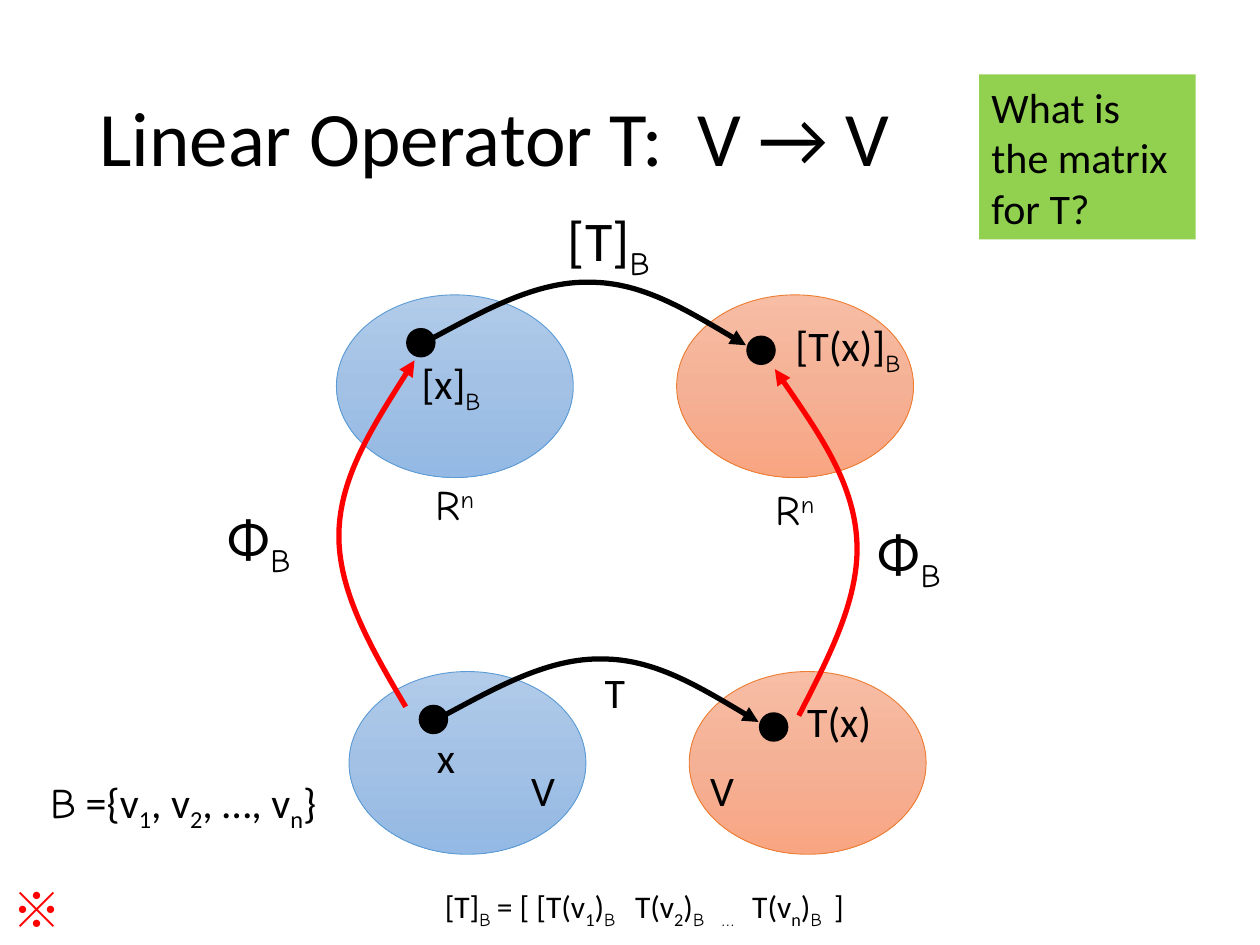
from copy import deepcopy

from lxml import etree
from pptx import Presentation
from pptx import util as u
from pptx.dml.color import RGBColor
from pptx.enum import shapes, text
from pptx.oxml.ns import qn

COLORS = {"ink": "000000", "red": "FF0000", "green": "92D050",
          "blue_edge": "5B9BD5", "orange_edge": "ED7D31"}
GRADIENTS = {"blue": ("B1CBE9", "A3C1E5", "93B9E4"),
             "orange": ("F7BDA5", "F5B196", "F8A582")}
SANS, COMIC, CJK = "Calibri", "Comic Neue", "Noto Sans CJK TC"
SUB, SUPER = -25, 30
BASIS = ("B", COMIC, SUB)
CENTER = text.PP_ALIGN.CENTER
LABEL_SIZE = (1.2, 0.5)
OVAL_SIZE = (1.88, 1.45)
DOT = 0.22
OVAL_GAP = 2.7


def rgb(name):
    return RGBColor.from_string(COLORS.get(name, name))


def write(frame, runs, size, color="ink", align=None, tabs=(), spacing=None):
    """Fill a frame with runs given as strings or (text, font, baseline)."""
    paragraph = frame.paragraphs[0]
    for name, value in {"alignment": align, "line_spacing": spacing}.items():
        setattr(paragraph, name, value)
    if tabs:
        stops = etree.SubElement(paragraph._p.get_or_add_pPr(), qn("a:tabLst"))
        for stop in tabs:
            etree.SubElement(stops, qn("a:tab"), pos=str(u.Inches(stop)), algn="l")
    for part in runs:
        words, font, baseline = (part, SANS, 0) if isinstance(part, str) else part
        run = paragraph.add_run()
        run.text = words
        for name, value in {"name": font, "size": u.Pt(size)}.items():
            setattr(run.font, name, value)
        run.font.color.rgb = rgb(color)
        properties = run._r.get_or_add_rPr()
        etree.SubElement(properties, qn("a:ea"), typeface=font)
        if baseline:
            properties.set("baseline", str(baseline * 1000))


def add_text(slide, box, runs, size=24, wrap=True, frame_format=None, **style):
    frame = slide.shapes.add_textbox(*map(u.Inches, box)).text_frame
    frame.word_wrap = wrap
    for name, value in (frame_format or {}).items():
        setattr(frame, name, value)
    write(frame, runs, size, **style)


def add_shape(slide, kind, box):
    shape = slide.shapes.add_shape(kind, *map(u.Inches, box))
    shape.shadow.inherit = False
    return shape


def add_oval(slide, left, top, hue):
    oval = add_shape(slide, shapes.MSO_SHAPE.OVAL, (left, top, *OVAL_SIZE))
    oval.fill.gradient()
    oval.fill.gradient_angle = 270
    stop_list = oval._element.spPr.find(".//" + qn("a:gsLst"))
    stop_list.insert(1, deepcopy(stop_list[0]))
    for stop, color, position in zip(oval.fill.gradient_stops, GRADIENTS[hue], (0, 0.5, 1)):
        stop.color.rgb = rgb(color)
        stop.position = position
    oval.line.color.rgb = rgb(hue + "_edge")
    oval.line.width = u.Pt(0.5)


def add_dot(slide, left, top):
    dot = add_shape(slide, shapes.MSO_SHAPE.OVAL, (left, top, DOT, DOT))
    dot.fill.solid()
    dot.fill.fore_color.rgb = rgb("ink")
    dot.line.color.rgb = rgb("ink")
    dot.line.width = u.Pt(1)


def add_curved_arrow(slide, left, top, points, color):
    """Draw cubic Bézier pieces; points are the start, then threes."""
    start, *rest = [(u.Inches(left + x), u.Inches(top + y)) for x, y in points]
    builder = slide.shapes.build_freeform(*start)
    builder.add_line_segments(rest, close=False)
    arrow = builder.convert_to_shape()
    arrow.shadow.inherit = False
    arrow.fill.background()
    arrow.line.color.rgb = rgb(color)
    arrow.line.width = u.Pt(3)
    etree.SubElement(arrow.line._get_or_add_ln(), qn("a:tailEnd"), type="triangle")
    outline = arrow._element.spPr.find(".//" + qn("a:path"))
    segments = outline.findall(qn("a:lnTo"))
    for i in range(0, len(segments), 3):
        curve = etree.SubElement(outline, qn("a:cubicBezTo"))
        for segment in segments[i:i + 3]:
            curve.append(segment[0])
            outline.remove(segment)


def add_mapping(slide, left, top, labels):
    """Draw two sets, a point in each, and the arrow between the points."""
    for column, hue in enumerate(GRADIENTS):
        add_oval(slide, left + column * OVAL_GAP, top, hue)
    add_dot(slide, left + 0.56, top + 0.27)
    add_dot(slide, left + 0.56 + OVAL_GAP, top + 0.33)
    add_curved_arrow(slide, left, top, [
        (0.77, 0.34), (1.18, 0.12), (1.59, -0.11), (2.01, -0.1),
        (2.42, -0.1), (2.83, 0.15), (3.25, 0.4)], "ink")
    for x, y, runs in labels:
        add_text(slide, (left + x, top + y, *LABEL_SIZE), runs, align=CENTER)


def add_coordinate_maps(slide, left, top):
    """Draw the two red arrows from V up to the coordinate space."""
    add_curved_arrow(slide, left, top, [
        (0.53, 2.75), (0.26, 2.29), (-0.01, 1.83), (0, 1.37),
        (0.01, 0.92), (0.31, 0.46), (0.6, 0)], "red")
    add_curved_arrow(slide, left, top, [
        (3.65, 2.82), (3.89, 2.35), (4.14, 1.88), (4.11, 1.42),
        (4.08, 0.96), (3.77, 0.52), (3.46, 0.07)], "red")
    for x, y in ((-0.98, 1.08), (4.18, 1.2)):
        add_text(slide, (left + x, top + y, 0.77, 0.64), ["Φ", BASIS], 32, wrap=False)


def add_title(slide, box):
    add_text(slide, box, ["Linear Operator T:\tV → V"], 44, tabs=[4.75], spacing=0.9,
             frame_format={"vertical_anchor": text.MSO_ANCHOR.MIDDLE})


def add_question(slide, box):
    card = add_shape(slide, shapes.MSO_SHAPE.RECTANGLE, box)
    card.fill.solid()
    card.fill.fore_color.rgb = rgb("green")
    card.line.fill.background()
    card.text_frame.word_wrap = True
    write(card.text_frame, ["What is the matrix for T?"], 24, align=text.PP_ALIGN.LEFT)


def add_basis(slide, box):
    runs = [("B", COMIC, 0), " ={v", ("1", SANS, SUB), ", v", ("2", SANS, SUB),
            ", …, v", ("n", SANS, SUB), "}"]
    add_text(slide, box, runs, wrap=False)


def add_matrix_formula(slide, box):
    runs = ["[T]", ("B ", COMIC, SUB), "= [ [T(v", ("1", SANS, SUB), ")",
            ("B\t", COMIC, SUB), "T(v", ("2", SANS, SUB), ")",
            ("B\t…\t", COMIC, SUB), "T(v", ("n", SANS, SUB), ")",
            ("B\t", COMIC, SUB), "]"]
    add_text(slide, box, runs, 18, tabs=[1.51, 2.2, 2.44, 3.09],
             frame_format={"margin_left": u.Inches(0.21), "margin_right": 0})


def main():
    deck = Presentation()
    deck.slide_width, deck.slide_height = u.Inches(10), u.Inches(7.5)
    slide = deck.slides.add_slide(deck.slide_layouts[6])

    add_title(slide, (0.69, 0.4, 8.62, 1.45))
    add_text(slide, (0, 6.93, 0.58, 0.57), [("※", CJK, 0)], 28, color="red")
    add_mapping(slide, 2.77, 5.33, [
        (0.94, 0.69, ["V"]), (2.36, 0.69, ["V"]), (0.17, 0.43, ["x"]),
        (3.29, 0.14, ["T(x)"]), (1.51, -0.09, ["T"])])
    space = [("R", COMIC, 0), ("n", COMIC, SUPER)]
    add_mapping(slide, 2.67, 2.34, [
        (0.34, 1.41, space), (3.04, 1.45, space),
        (0.31, 0.45, ["[x]", BASIS]), (3.46, 0.15, ["[T(x)]", BASIS])])
    add_text(slide, (4.41, 1.58, 0.93, 0.64), ["[T]", BASIS], 32, wrap=False)
    add_coordinate_maps(slide, 2.69, 2.86)
    add_question(slide, (7.77, 0.59, 1.72, 1.31))
    add_basis(slide, (0.3, 6.11, 2.59, 0.5))
    add_matrix_formula(slide, (3.32, 6.99, 3.59, 0.4))
    deck.save("out.pptx")


if __name__ == "__main__":
    main()
